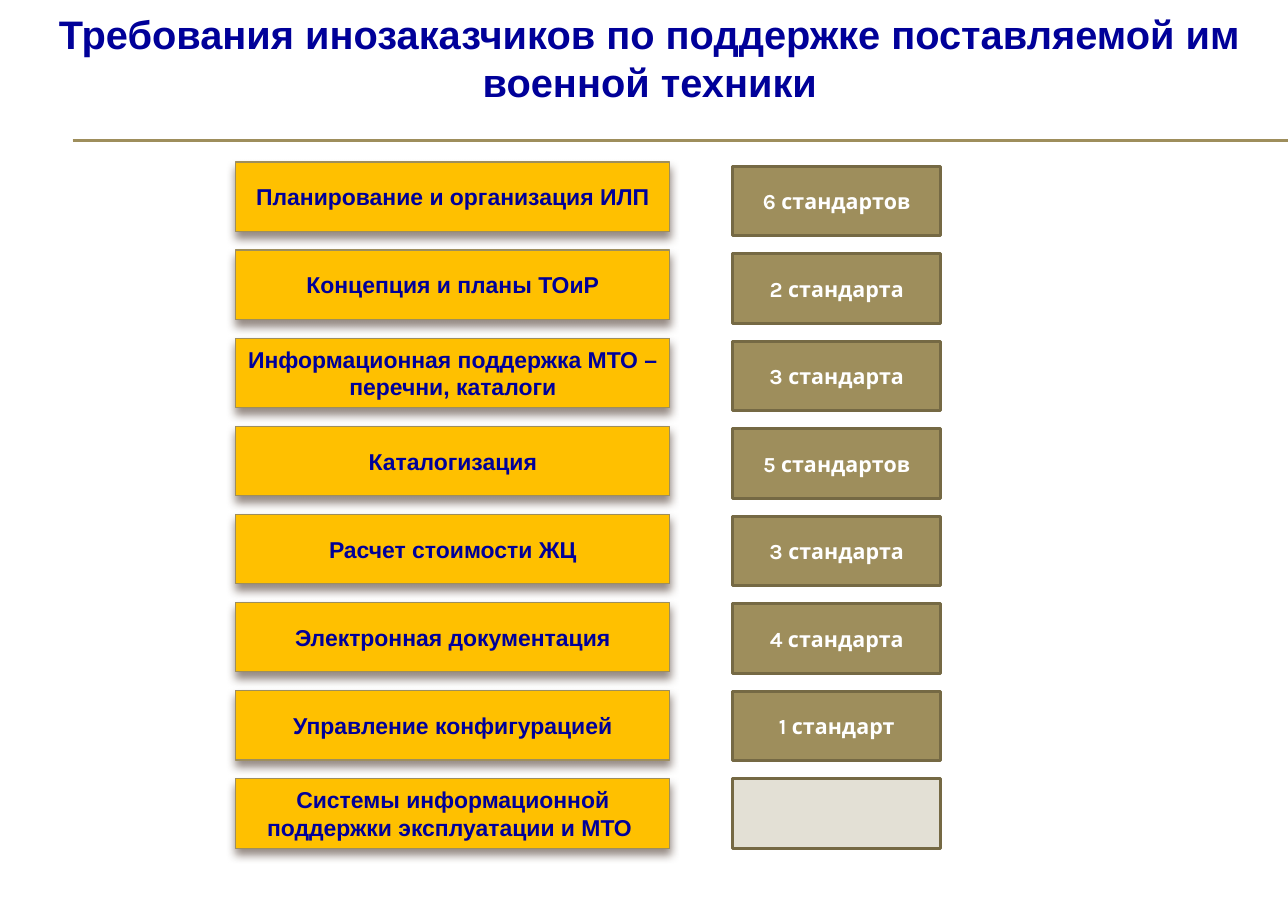
"""Slide on foreign customers' support requirements and the number of standards for each."""
from lxml import etree
from pptx import Presentation
from pptx.dml.color import RGBColor
from pptx.enum.shapes import MSO_CONNECTOR, MSO_SHAPE
from pptx.enum.text import MSO_ANCHOR, MSO_AUTO_SIZE, PP_ALIGN
from pptx.oxml.ns import qn
from pptx.util import Inches, Pt

STRAIGHT = MSO_CONNECTOR.STRAIGHT
RECTANGLE = MSO_SHAPE.RECTANGLE
MIDDLE = MSO_ANCHOR.MIDDLE
CENTER = PP_ALIGN.CENTER
GROW = MSO_AUTO_SIZE.SHAPE_TO_FIT_TEXT

COLORS = {
    "navy": "000099", "amber": "FFC000", "khaki": "9E8E5C", "olive": "756944",
    "pale": "E3E0D5", "white": "FFFFFF", "shadow": "4E3B30",
}
SLIDE_WIDTH = 11.69
ROW_HEIGHT = 0.63
REQUIREMENT_FORMAT = {"name": "Arial", "size": Pt(15), "bold": True}
STANDARD_FORMAT = {"name": "Karla", "size": Pt(14), "bold": True}
TITLE_FORMAT = {"name": "Arial", "size": Pt(26), "bold": True}

requirements = [
    ("Планирование и организация ИЛП", "6 стандартов"),
    ("Концепция и планы ТОиР", "2 стандарта"),
    ("Информационная поддержка МТО – перечни, каталоги", "3 стандарта"),
    ("Каталогизация", "5 стандартов"),
    ("Расчет стоимости ЖЦ", "3 стандарта"),
    ("Электронная документация", "4 стандарта"),
    ("Управление конфигурацией", "1 стандарт"),
    ("Системы информационной поддержки эксплуатации и МТО ", ""),
]


def write(shape, text, color, font_format, margins):
    frame = shape.text_frame
    frame.word_wrap = True
    frame.margin_left = frame.margin_right = Inches(margins[0])
    frame.margin_top = frame.margin_bottom = Inches(margins[1])
    paragraph = frame.paragraphs[0]
    paragraph.alignment = CENTER
    if text:
        run = paragraph.add_run()
        run.text = text
        run.font.color.rgb = RGBColor.from_string(COLORS[color])
        for attribute, value in font_format.items():
            setattr(run.font, attribute, value)


def add_box(left, top, width, fill, line, line_width):
    box = slide.shapes.add_shape(
        RECTANGLE, Inches(left), Inches(top), Inches(width), Inches(ROW_HEIGHT))
    box.fill.solid()
    box.fill.fore_color.rgb = RGBColor.from_string(COLORS[fill])
    box.line.color.rgb = RGBColor.from_string(COLORS[line])
    box.line.width = Pt(line_width)
    box.shadow.inherit = False
    box.text_frame.vertical_anchor = MIDDLE
    return box


prs = Presentation()
prs.slide_width = Inches(SLIDE_WIDTH)
prs.slide_height = Inches(8.27)
slide = prs.slides.add_slide(prs.slide_layouts[6])

for rule_y in (1.27, 1.28):
    title_rule = slide.shapes.add_connector(
        STRAIGHT, Inches(0.66), Inches(rule_y), Inches(SLIDE_WIDTH), Inches(rule_y))
    title_rule.line.color.rgb = RGBColor.from_string(COLORS["khaki"])
    title_rule.line.width = Pt(0.75)
    etree.SubElement(title_rule._element.spPr, qn("a:effectLst"))

title = slide.shapes.add_textbox(Inches(0.25), Inches(0.03), Inches(11.3), Inches(0.99))
write(title, "Требования инозаказчиков по поддержке поставляемой им военной техники",
      "navy", TITLE_FORMAT, (0.11, 0.06))
title.text_frame.auto_size = GROW

for row, (requirement, standards) in enumerate(requirements):
    requirement_box = add_box(2.14, 1.47 + 0.8 * row, 3.94, "amber", "khaki", 0.79)
    write(requirement_box, requirement, "navy", REQUIREMENT_FORMAT, (0.04, 0.04))
    effects = requirement_box._element.spPr.find(qn("a:effectLst"))
    shadow = etree.SubElement(
        effects, qn("a:outerShdw"), blurRad=str(Pt(6)), dist=str(Pt(4)),
        dir="5400000", rotWithShape="0")
    shadow_color = etree.SubElement(shadow, qn("a:srgbClr"), val=COLORS["shadow"])
    etree.SubElement(shadow_color, qn("a:alpha"), val="60000")

    standards_fill = "khaki" if standards else "pale"
    standards_box = add_box(6.65, 1.51 + 5.56 / 7 * row, 1.89, standards_fill, "olive", 2)
    write(standards_box, standards, "white", STANDARD_FORMAT, (0.1, 0.05))

prs.save("out.pptx")
